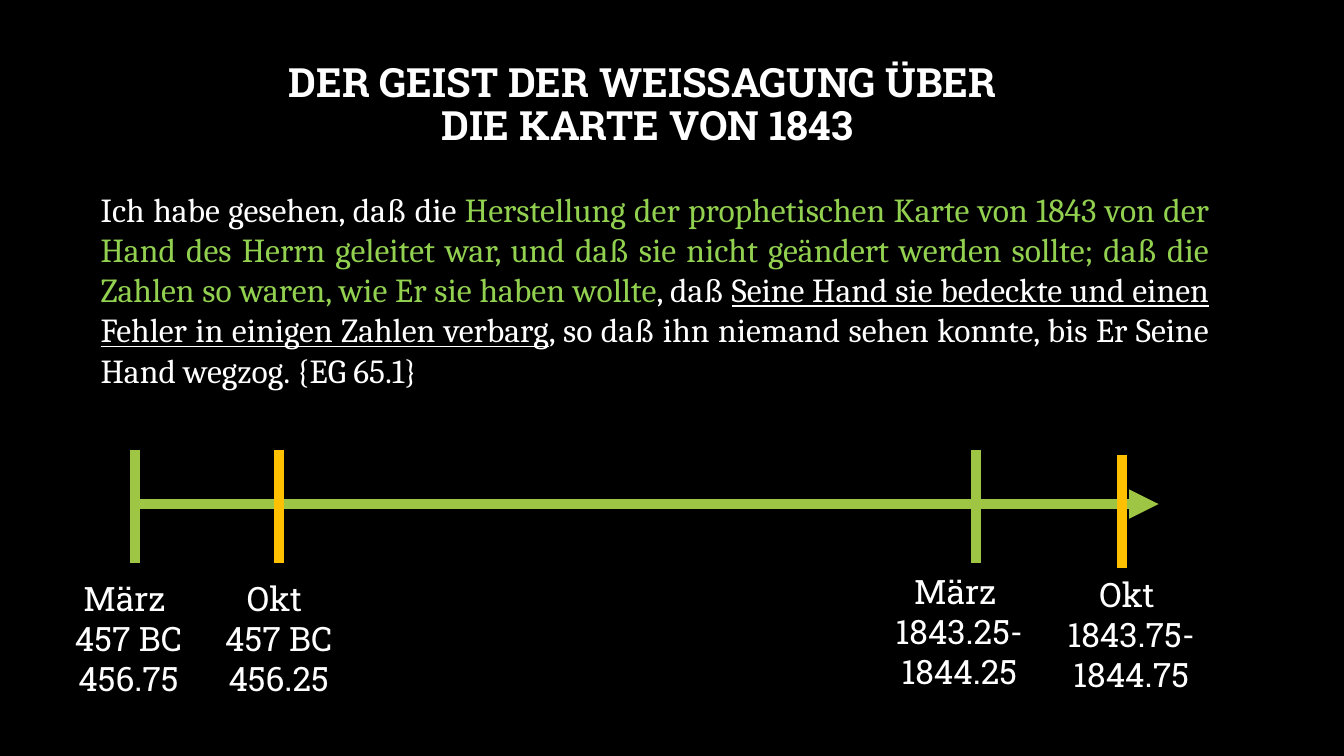
from dataclasses import dataclass

from lxml.etree import SubElement
from pptx import Presentation
from pptx.dml.color import RGBColor
from pptx.enum.shapes import MSO_CONNECTOR
from pptx.enum.text import MSO_ANCHOR, PP_ALIGN
from pptx.oxml.ns import qn
from pptx.util import Inches, Pt


@dataclass(frozen=True)
class Theme:
    background: str = "000000"
    text: str = "FFFFFF"
    highlight: str = "92D050"
    march: str = "9EC544"
    october: str = "FFC000"
    heading_font: str = "Roboto Slab"
    body_font: str = "Cambria"
    title_size: float = 28.8
    body_size: float = 24
    line_width: float = 7


THEME = Theme()

TITLE = "DER GEIST DER WEISSAGUNG ÜBER \nDIE KARTE VON 1843"

# text, colour, underlined
QUOTE = [
    ("Ich habe gesehen, daß die ", THEME.text, False),
    ("Herstellung der prophetischen Karte von 1843 von der Hand des Herrn "
     "geleitet war, und daß sie nicht geändert werden sollte; daß die Zahlen "
     "so waren, wie Er sie haben wollte", THEME.highlight, False),
    (", daß ", THEME.text, False),
    ("Seine Hand sie bedeckte und einen Fehler in einigen Zahlen verbarg",
     THEME.text, True),
    (", so daß ihn niemand sehen konnte, bis Er Seine Hand wegzog. {EG 65.1}",
     THEME.text, False),
]

# All lengths below are percent of the slide's width or height.
# month, years, colour, tick x, tick top, label left, label top, label width
DATES = [
    ("März ", "457 BC\n456.75", THEME.march, 10.05, 59.47, 4.28, 75.73, 10.58),
    ("Okt ", "457 BC\n456.25", THEME.october, 20.78, 59.47, 15.45, 75.73, 10.58),
    ("März ", "1843.25- 1844.25", THEME.march, 72.62, 59.47, 64.89, 74.8, 12.98),
    ("Okt ", "1843.75- 1844.75", THEME.october, 83.5, 60.13, 76.97, 75.2, 14.4),
]
TITLE_BOX = (10.2, 11.2, 76, 9.2)
QUOTE_BOX = (6.75, 24.27, 83.95, 28.27)
AXIS = (9.98, 66.67, 86.2, 66.67)
TICK_HEIGHT = 15.07
LABEL_HEIGHT = 17.47

prs = Presentation()
prs.slide_width, prs.slide_height = Inches(13.33), Inches(7.5)
s = prs.slides.add_slide(prs.slide_layouts[6])
s.background.fill.solid()
s.background.fill.fore_color.rgb = RGBColor.from_string(THEME.background)


def place(shares):
    """Turn alternating x and y percentages into slide lengths."""
    sides = (prs.slide_width, prs.slide_height) * 2
    return [int(side * share / 100) for side, share in zip(sides, shares)]


def add_text_box(box):
    tf = s.shapes.add_textbox(*place(box)).text_frame
    tf.word_wrap = True
    return tf


def style(p, font, size, align, bold=False):
    p.alignment = align
    for r in p.runs:
        r.font.name = font
        r.font.size = Pt(size)
        r.font.bold = bold
        r.font.color.rgb = RGBColor.from_string(THEME.text)


def add_line(ends, color, arrow=False):
    line = s.shapes.add_connector(MSO_CONNECTOR.STRAIGHT, *place(ends))
    line.line.color.rgb = RGBColor.from_string(color)
    line.line.width = Pt(THEME.line_width)
    if arrow:
        SubElement(line.line._get_or_add_ln(), qn("a:tailEnd"), type="triangle")
    SubElement(line._element.spPr, qn("a:effectLst"))


title = add_text_box(TITLE_BOX)
title.vertical_anchor = MSO_ANCHOR.BOTTOM
p = title.paragraphs[0]
p.text = TITLE
p.line_spacing = 0.9
style(p, THEME.heading_font, THEME.title_size, PP_ALIGN.CENTER, bold=True)

p = add_text_box(QUOTE_BOX).paragraphs[0]
for text, _, _ in QUOTE:
    p.add_run().text = text
style(p, THEME.body_font, THEME.body_size, PP_ALIGN.JUSTIFY)
for r, (_, color, underlined) in zip(p.runs, QUOTE):
    r.font.color.rgb = RGBColor.from_string(color)
    r.font.underline = underlined

add_line(AXIS, THEME.march, arrow=True)
for month, years, color, x, tick_top, left, top, width in DATES:
    add_line((x, tick_top, x, tick_top + TICK_HEIGHT), color)
    tf = add_text_box((left, top, width, LABEL_HEIGHT))
    tf.paragraphs[0].text = month
    tf.add_paragraph().text = years
    for p in tf.paragraphs:
        style(p, THEME.heading_font, THEME.body_size, PP_ALIGN.CENTER)

prs.save("out.pptx")
